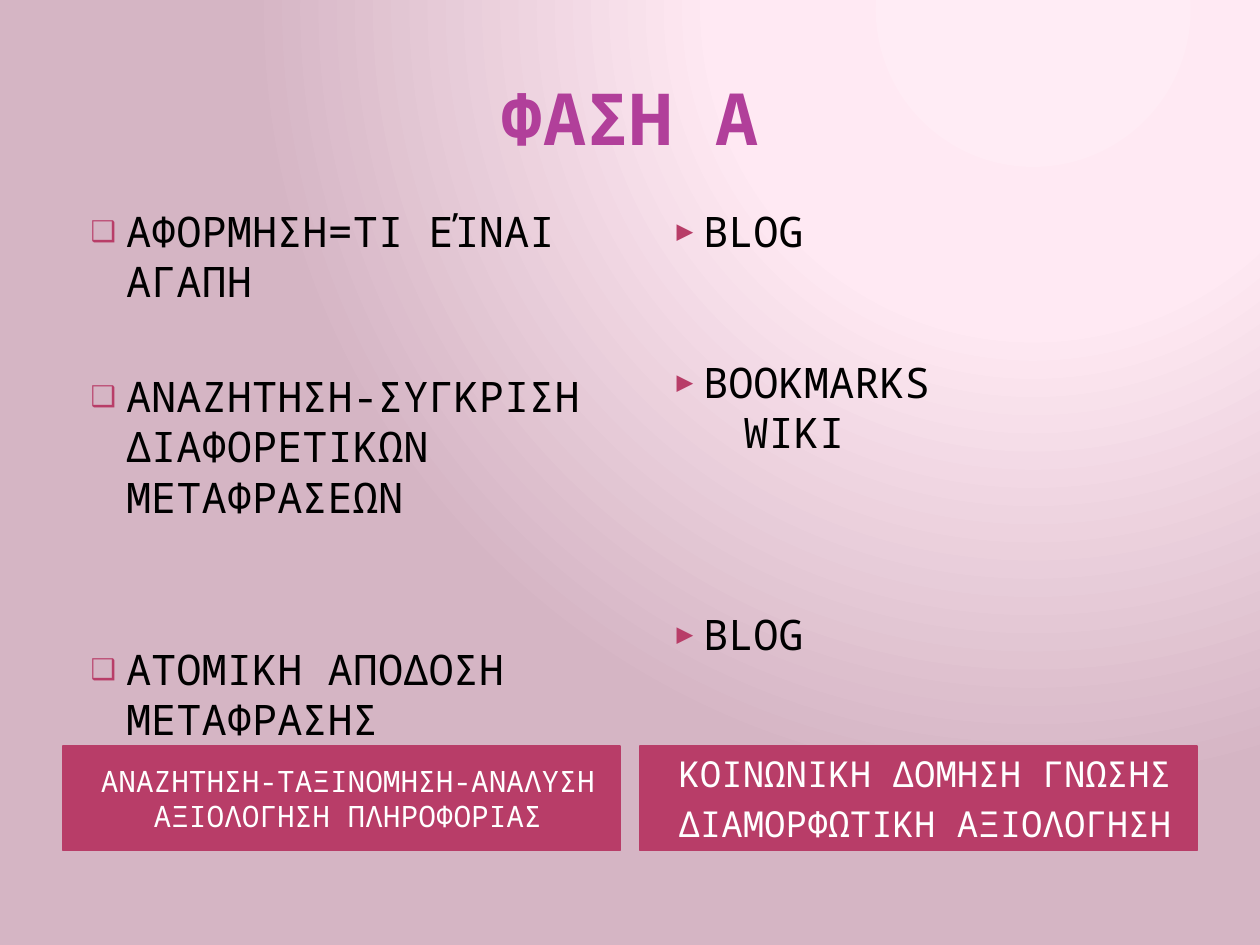
from lxml import etree
from pptx import Presentation
from pptx.dml.color import RGBColor
from pptx.enum.text import MSO_ANCHOR, MSO_AUTO_SIZE, PP_ALIGN
from pptx.oxml import parse_xml
from pptx.oxml.ns import nsdecls, qn
from pptx.util import Inches, Pt

FONT = "Noto Sans Mono"
ROSE = "B83D68"


def rgb(color):
    return RGBColor.from_string(color)


def add_paragraph(frame, text, size, color, space_before, bullet=None):
    """Fill the first paragraph if it is empty, otherwise append one."""
    paragraph = frame.paragraphs[0]
    if paragraph.text:
        paragraph = frame.add_paragraph()
        paragraph.space_before = Pt(space_before)
    else:
        paragraph.space_before = Pt(0)
    paragraph.text = text
    properties = paragraph._p.get_or_add_pPr()
    if bullet:
        properties.set("marL", str(Inches(0.4)))
        properties.set("indent", str(Inches(-0.28)))
        bullet_color = etree.SubElement(properties, qn("a:buClr"))
        etree.SubElement(bullet_color, qn("a:srgbClr"), val=ROSE)
        etree.SubElement(properties, qn("a:buSzPct"), val="68000")
        etree.SubElement(properties, qn("a:buFont"), typeface=FONT)
        etree.SubElement(properties, qn("a:buChar"), char=bullet)
    else:
        etree.SubElement(properties, qn("a:buNone"))
    paragraph.font.name = FONT
    paragraph.font.size = Pt(size)
    paragraph.font.bold = False
    paragraph.font.color.rgb = rgb(color)
    return paragraph


presentation = Presentation()
presentation.slide_width = Inches(10)
presentation.slide_height = Inches(7.5)
slide = presentation.slides.add_slide(presentation.slide_layouts[4])

# Radial background glowing from the upper right
slide.background.fill.gradient()
linear_gradient = slide.element.find(".//" + qn("a:gradFill"))
stops = "".join(
    f'<a:gs pos="{percent * 1000}"><a:srgbClr val="{color}"/></a:gs>'
    for percent, color in [(0, "FFECF5"), (40, "FFE9F3"), (100, "D5B5C4")]
)
linear_gradient.getparent().replace(linear_gradient, parse_xml(
    f'<a:gradFill {nsdecls("a")} rotWithShape="1"><a:gsLst>{stops}</a:gsLst>'
    '<a:path path="circle"><a:fillToRect l="65000" t="0" r="0" b="98000"/>'
    '</a:path></a:gradFill>'
))

title, left_caption, left_list, right_caption, right_list = slide.placeholders

title.left, title.top = Inches(0.5), Inches(0.3)
title.width, title.height = Inches(9), Inches(1.25)
title.text_frame.vertical_anchor = MSO_ANCHOR.MIDDLE
heading = add_paragraph(title.text_frame, "ΦΑΣΗ Α", 41, "B13F9A", 0)
heading.alignment = PP_ALIGN.CENTER
heading.font.bold = True

# One column per entry: left edge, list, bullet, steps (text, space before),
# caption, caption size, caption lines
columns = [
    (0.5, left_list, "❑", [
        ("ΑΦΟΡΜΗΣΗ=ΤΙ ΕΊΝΑΙ ΑΓΑΠΗ", 0),
        ("ΑΝΑΖΗΤΗΣΗ-ΣΥΓΚΡΙΣΗ ΔΙΑΦΟΡΕΤΙΚΩΝ ΜΕΤΑΦΡΑΣΕΩΝ", 36.75),
        ("ΑΤΟΜΙΚΗ ΑΠΟΔΟΣΗ ΜΕΤΑΦΡΑΣΗΣ", 69.5),
    ], left_caption, 16.8, ["ΑΝΑΖΗΤΗΣΗ-ΤΑΞΙΝΟΜΗΣΗ-ΑΝΑΛΥΣΗ ΑΞΙΟΛΟΓΗΣΗ ΠΛΗΡΟΦΟΡΙΑΣ"]),
    (5.08, right_list, "▶", [
        ("BLOG", 0),
        ("BOOKMARKS", 57.5),
        ("WIKI", 0),
        ("BLOG", 86.5),
    ], right_caption, 20.4, ["ΚΟΙΝΩΝΙΚΗ ΔΟΜΗΣΗ ΓΝΩΣΗΣ", "ΔΙΑΜΟΡΦΩΤΙΚΗ ΑΞΙΟΛΟΓΗΣΗ"]),
]

for left, steps_box, bullet, steps, caption, caption_size, lines in columns:
    for box, top, height in [(steps_box, 1.58, 4.31), (caption, 5.92, 0.83)]:
        box.left, box.top = Inches(left), Inches(top)
        box.width, box.height = Inches(4.42), Inches(height)
        box.text_frame.auto_size = MSO_AUTO_SIZE.NONE

    steps_box.text_frame.vertical_anchor = MSO_ANCHOR.TOP
    for text, gap in steps:
        is_continuation = text == "WIKI"
        step = add_paragraph(steps_box.text_frame, text, 24, "000000", gap,
                             None if is_continuation else bullet)
        if is_continuation:
            step._p.pPr.set("marL", str(Inches(0.72)))
            step._p.pPr.set("indent", "0")

    caption.fill.solid()
    caption.fill.fore_color.rgb = rgb(ROSE)
    caption.line.color.rgb = rgb(ROSE)
    caption.line.width = Pt(0.75)
    caption.text_frame.vertical_anchor = MSO_ANCHOR.MIDDLE
    caption.text_frame.margin_left = Inches(0.2)
    for line in lines:
        paragraph = add_paragraph(caption.text_frame, line, caption_size, "FFFFFF", 4)
        paragraph.alignment = PP_ALIGN.CENTER

presentation.save("out.pptx")
